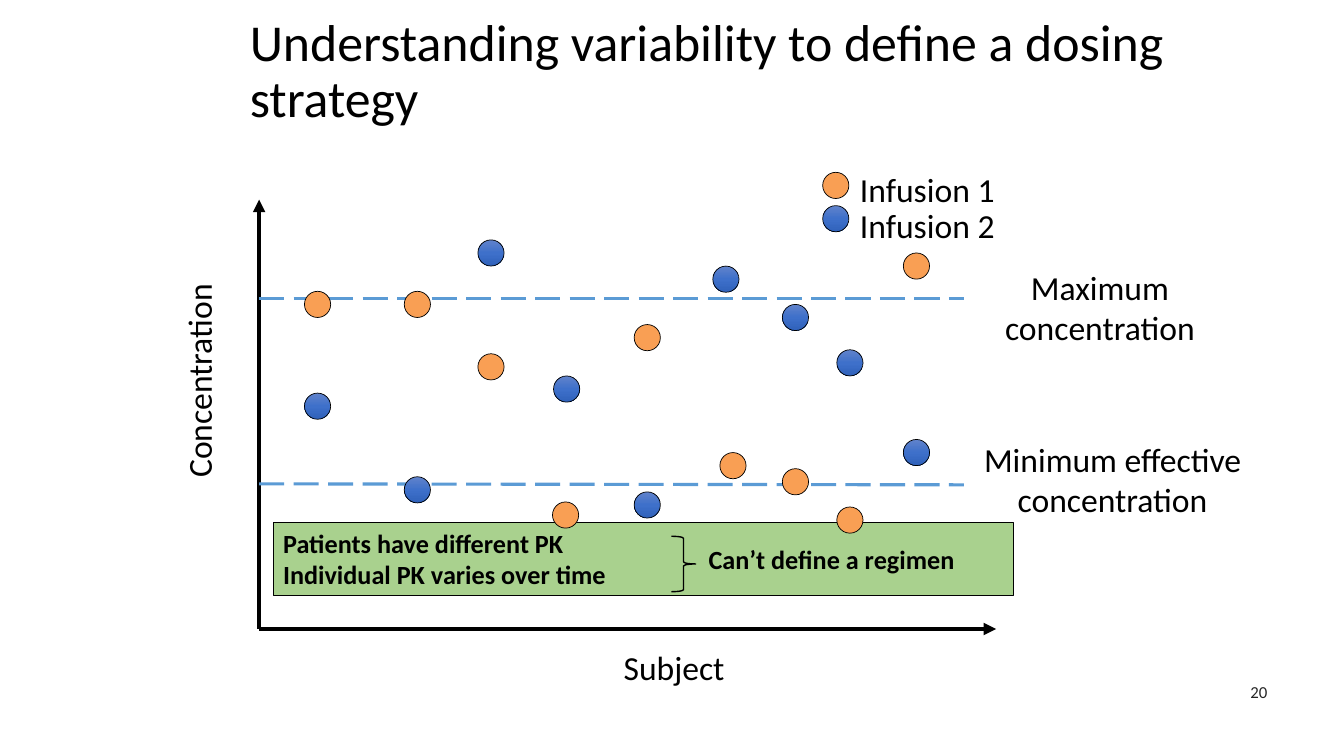
"""Build the slide on variability of drug concentrations between subjects."""
from copy import deepcopy

from lxml import etree
from pptx import Presentation
from pptx.dml.color import RGBColor
from pptx.enum.dml import MSO_LINE
from pptx.enum.shapes import MSO_CONNECTOR, MSO_SHAPE
from pptx.enum.text import MSO_ANCHOR, MSO_AUTO_SIZE, PP_ALIGN
from pptx.oxml.ns import qn
from pptx.util import Inches, Pt

LEFT, CENTER, RIGHT = PP_ALIGN.LEFT, PP_ALIGN.CENTER, PP_ALIGN.RIGHT
TOP, MIDDLE = MSO_ANCHOR.TOP, MSO_ANCHOR.MIDDLE
FIT, FIXED = MSO_AUTO_SIZE.SHAPE_TO_FIT_TEXT, MSO_AUTO_SIZE.NONE
STRAIGHT, LONG_DASH = MSO_CONNECTOR.STRAIGHT, MSO_LINE.LONG_DASH
OVAL, RECTANGLE, BRACE = MSO_SHAPE.OVAL, MSO_SHAPE.RECTANGLE, MSO_SHAPE.RIGHT_BRACE

COLORS = {
    "black": "000000",
    "number": "262626",
    "limit": "5B9BD5",
    "orange": "F99F54",
    "green": "A9D18E",
    "blue light": "6183CB",
    "blue": "3E70CA",
    "blue dark": "3062BB",
}
BLUE_STOPS = [(0, "blue light"), (0.5, "blue"), (1, "blue dark")]
DOT = 0.26

deck = Presentation()
deck.slide_width, deck.slide_height = Inches(13.33), Inches(7.5)
page = deck.slides.add_slide(deck.slide_layouts[6])


def write(box, lines, size, align=LEFT, color="black", bold=False, anchor=TOP, fit=FIT):
    """Fill a shape with one paragraph per line of text."""
    frame_format = {"word_wrap": True, "auto_size": fit, "vertical_anchor": anchor}
    for name, value in frame_format.items():
        setattr(box.text_frame, name, value)
    box.text_frame.text = "\n".join(lines)
    font_format = {"name": "Calibri", "size": Pt(size), "bold": bold}
    for para in box.text_frame.paragraphs:
        para.alignment = align
        for span in para.runs:
            for name, value in font_format.items():
                setattr(span.font, name, value)
            span.font.color.rgb = RGBColor.from_string(COLORS[color])


def draw(kind, place, fill, weight):
    """Add a black-outlined shape with no fill, a plain fill or the blue gradient."""
    shape = page.shapes.add_shape(kind, *map(Inches, place))
    shape.shadow.inherit = False
    shape.line.color.rgb = RGBColor.from_string(COLORS["black"])
    shape.line.width = Pt(weight)
    if fill is None:
        shape.fill.background()
    elif fill == "blue":
        shape.fill.gradient()
        shape.fill.gradient_angle = 270
        stop_list = shape._element.spPr.find(".//" + qn("a:gsLst"))
        stop_list.append(deepcopy(stop_list[0]))
        for stop, (position, color) in zip(shape.fill.gradient_stops, BLUE_STOPS):
            stop.position = position
            stop.color.rgb = RGBColor.from_string(COLORS[color])
    else:
        shape.fill.solid()
        shape.fill.fore_color.rgb = RGBColor.from_string(COLORS[fill])
    return shape


title = page.shapes.add_textbox(Inches(2.38), Inches(0), Inches(10.03), Inches(1.45))
write(title, ["Understanding variability to define a dosing strategy"], 37, anchor=MIDDLE, fit=FIXED)
title.text_frame.paragraphs[0].line_spacing = 0.9

number = page.shapes.add_textbox(Inches(9.56), Inches(6.66), Inches(3.11), Inches(0.4))
write(number, ["20"], 12, RIGHT, "number", anchor=MIDDLE, fit=FIXED)

lines = [
    ((2.57, 6.24, 2.57, 1.98), "black", 3, True),
    ((2.57, 6.24, 9.88, 6.24), "black", 3, True),
    ((2.57, 2.96, 9.56, 2.96), "limit", 2.25, False),
    ((2.57, 4.8, 9.56, 4.81), "limit", 2.25, False),
]
for ends, color, weight, is_axis in lines:
    line = page.shapes.add_connector(STRAIGHT, *map(Inches, ends))
    line.line.color.rgb = RGBColor.from_string(COLORS[color])
    line.line.width = Pt(weight)
    if is_axis:
        etree.SubElement(line.line._get_or_add_ln(), qn("a:tailEnd"), type="triangle")
    else:
        line.line.dash_style = LONG_DASH
    etree.SubElement(line._element.spPr, qn("a:effectLst"))

labels = [
    ("Concentration", (0.7, 3.53, 2.54, 0.5), CENTER, 270),
    ("Subject", (5.74, 6.37, 1.89, 0.5), CENTER, 0),
    ("Minimum effective concentration", (9.56, 4.3, 2.95, 0.91), CENTER, 0),
    ("Maximum concentration", (9.56, 2.6, 2.7, 0.91), CENTER, 0),
    ("Infusion 1", (8.43, 1.63, 1.89, 0.5), LEFT, 0),
    ("Infusion 2", (8.43, 1.98, 1.89, 0.5), LEFT, 0),
]
for text, place, align, turn in labels:
    label = page.shapes.add_textbox(*map(Inches, place))
    label.rotation = turn
    write(label, [text], 24, align)

banner = draw(RECTANGLE, (2.71, 5.18, 7.34, 0.73), "green", 0.75)
write(banner, ["Patients have different PK", "Individual PK varies over time"], 18.7, bold=True)
draw(BRACE, (6.66, 5.32, 0.24, 0.55), None, 1)
conclusion = page.shapes.add_textbox(Inches(6.93), Inches(5.34), Inches(4.1), Inches(0.42))
write(conclusion, ["Can’t define a regimen"], 18.7, bold=True)

legend_dots = {"orange": [(8.16, 1.71)], "blue": [(8.16, 2.04)]}
infusion_dots = {
    "orange": [
        (3.02, 2.89), (4.01, 2.89), (4.74, 3.51), (5.48, 4.98), (6.29, 3.22),
        (7.14, 4.49), (7.76, 4.65), (8.3, 5.03), (8.96, 2.51),
    ],
    "blue": [
        (3.02, 3.9), (4.01, 4.73), (4.74, 2.38), (5.49, 3.73), (6.29, 4.88),
        (7.07, 2.64), (7.76, 3.02), (8.3, 3.47), (8.96, 4.36),
    ],
}
for dots in (legend_dots, infusion_dots):
    for color, corners in dots.items():
        for left, top in corners:
            draw(OVAL, (left, top, DOT, DOT), color, 0.5)

deck.save("out.pptx")
